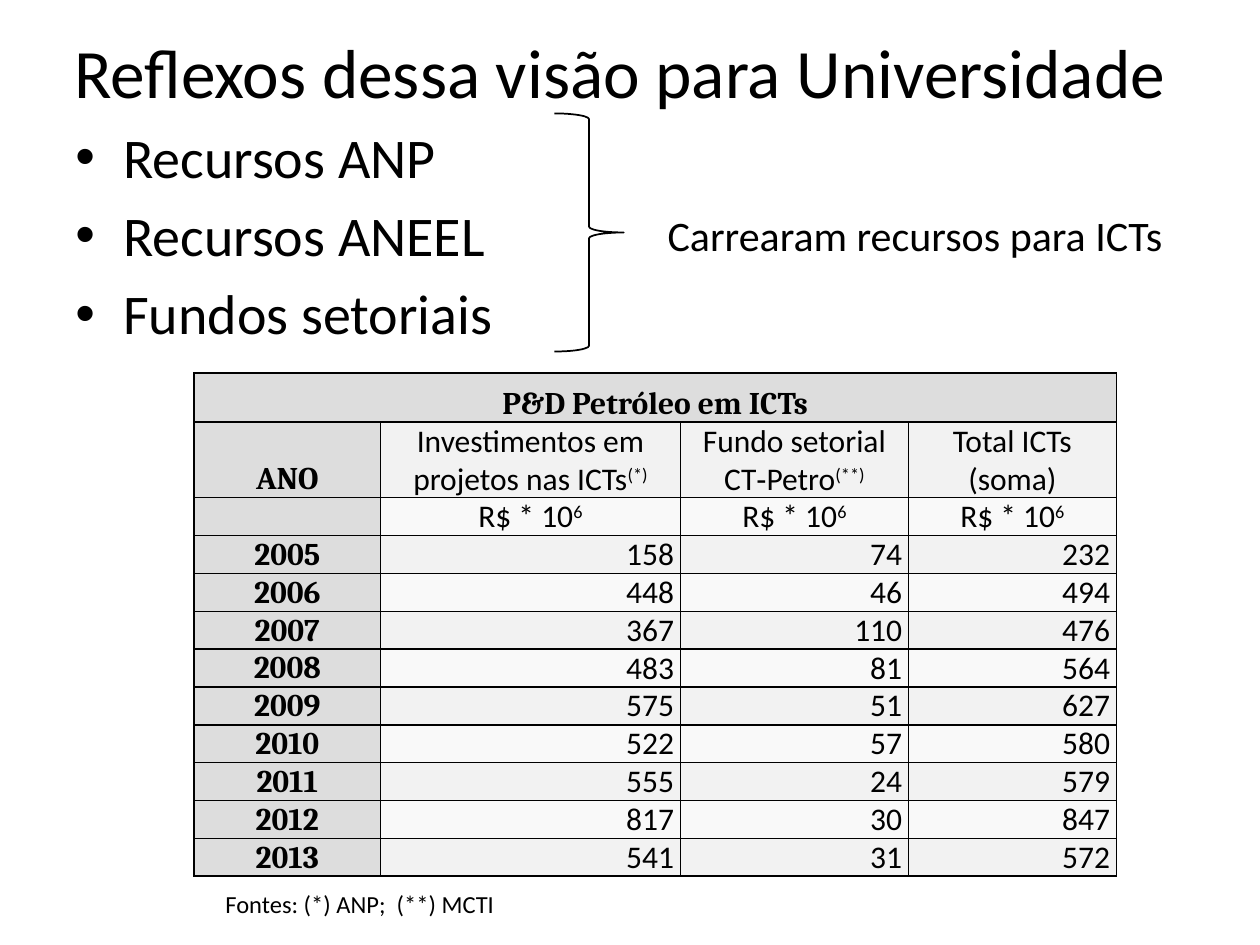
import pptx
import pptx.util
import pptx.dml.color
import pptx.enum.shapes
import pptx.enum.text
import pptx.oxml
import pptx.oxml.ns

Inches, Pt = pptx.util.Inches, pptx.util.Pt
ALIGN = pptx.enum.text.PP_ALIGN
ANCHOR = pptx.enum.text.MSO_ANCHOR

# Content
TITLE = "Reflexos dessa visão para Universidade"
FUNDING = ["Recursos ANP", "Recursos ANEEL", "Fundos setoriais"]
EFFECT = "Carrearam recursos para ICTs"
SOURCES = "Fontes: (*) ANP;  (**) MCTI"
TABLE_TITLE = "P&D Petróleo em ICTs"
# Each header or unit is (text, superscript)
HEADERS = [
    ("ANO", ""),
    ("Investimentos em projetos nas ICTs", "(*)"),
    ("Fundo setorial CT‑Petro", "(**)"),
    ("Total ICTs (soma)", ""),
]
UNITS = [("", "")] + [("R$ * 10", "6")] * 3
INVESTMENTS = [
    (2005, 158, 74, 232),
    (2006, 448, 46, 494),
    (2007, 367, 110, 476),
    (2008, 483, 81, 564),
    (2009, 575, 51, 627),
    (2010, 522, 57, 580),
    (2011, 555, 24, 579),
    (2012, 817, 30, 847),
    (2013, 541, 31, 572),
]

COLORS = {"ink": "000000", "label": "DDDDDD", "odd": "F2F2F2", "even": "F9F9F9"}
COLUMN_WIDTHS = [1.48, 2.38, 1.81, 1.65]
TITLE_ROW, HEADER_ROW, DATA_ROW = 0.39, 0.6, 0.26


def rgb(name):
    return pptx.dml.color.RGBColor.from_string(COLORS[name])


def add_run(paragraph, text, size, font="Calibri", bold=False, superscript=False):
    run = paragraph.add_run()
    run.text = text
    run.font.size = Pt(size)
    run.font.name = font
    run.font.bold = bold
    run.font.color.rgb = rgb("ink")
    if superscript:
        run._r.get_or_add_rPr().set("baseline", "30000")


def add_text(slide, box, lines, size):
    frame = slide.shapes.add_textbox(*map(Inches, box)).text_frame
    frame.word_wrap = True
    for i, line in enumerate(lines):
        paragraph = frame.add_paragraph() if i else frame.paragraphs[0]
        add_run(paragraph, line, size)
    return frame


def add_bullet(paragraph):
    properties = paragraph._p.get_or_add_pPr()
    properties.set("marL", str(Inches(0.38)))
    properties.set("indent", str(-Inches(0.38)))
    for tag, attribute, value in (("buFont", "typeface", "Arial"), ("buChar", "char", "•")):
        pptx.oxml.ns.qn("a:" + tag)
        properties.append(pptx.oxml.parse_xml(
            f'<a:{tag} {pptx.oxml.ns.nsdecls("a")} {attribute}="{value}"/>'))


def add_borders(cell):
    properties = cell._tc.get_or_add_tcPr()
    for side in "LRTB":
        properties.append(pptx.oxml.parse_xml(
            f'<a:ln{side} {pptx.oxml.ns.nsdecls("a")} w="{Pt(1)}"><a:solidFill>'
            f'<a:srgbClr val="{COLORS["ink"]}"/></a:solidFill></a:ln{side}>'))


def fill_cell(cell, text, superscript, fill, align):
    is_label = fill == "label"
    add_borders(cell)
    cell.fill.solid()
    cell.fill.fore_color.rgb = rgb(fill)
    cell.margin_left = cell.margin_right = Inches(0.05)
    cell.margin_top = cell.margin_bottom = 0
    cell.vertical_anchor = ANCHOR.BOTTOM
    paragraph = cell.text_frame.paragraphs[0]
    paragraph.alignment = align
    if text:
        add_run(paragraph, text, 18, "Cambria" if is_label else "Calibri", is_label)
    if superscript:
        add_run(paragraph, superscript, 18, superscript=True)


def add_investment_table(slide):
    rows = [[(TABLE_TITLE, "")] + [("", "")] * 3, HEADERS, UNITS]
    rows += [[(str(value), "") for value in year] for year in INVESTMENTS]
    heights = [TITLE_ROW, HEADER_ROW] + [DATA_ROW] * (len(rows) - 2)
    table = slide.shapes.add_table(
        len(rows), len(COLUMN_WIDTHS), Inches(1.54), Inches(2.96),
        Inches(sum(COLUMN_WIDTHS)), Inches(sum(heights))).table
    for column, width in zip(table.columns, COLUMN_WIDTHS):
        column.width = Inches(width)
    for r, (row, height) in enumerate(zip(rows, heights)):
        table.rows[r].height = Inches(height)
        for c, (text, superscript) in enumerate(row):
            is_label = r == 0 or c == 0
            fill = "label" if is_label else ("odd" if r % 2 else "even")
            align = ALIGN.CENTER if is_label or r < 3 else ALIGN.RIGHT
            fill_cell(table.cell(r, c), text, superscript, fill, align)
    table.cell(0, 0).merge(table.cell(0, len(COLUMN_WIDTHS) - 1))


def main():
    deck = pptx.Presentation()
    deck.slide_width, deck.slide_height = Inches(10), Inches(7.5)
    slide = deck.slides.add_slide(deck.slide_layouts[5])

    # Title
    title = slide.shapes.title
    title.left, title.top, title.width, title.height = map(Inches, (0.42, 0.05, 9, 1.02))
    title.text_frame.vertical_anchor = ANCHOR.MIDDLE
    heading = title.text_frame.paragraphs[0]
    heading.alignment = ALIGN.CENTER
    add_run(heading, TITLE, 39.6)

    # Funding sources
    funding = add_text(slide, (0.5, 0.92, 9, 5.78), FUNDING, 32)
    for paragraph in funding.paragraphs:
        paragraph.space_before = Pt(6.4)
        add_bullet(paragraph)

    # Brace and its effect
    brace = slide.shapes.add_shape(
        pptx.enum.shapes.MSO_SHAPE.RIGHT_BRACE, *map(Inches, (4.4, 0.9, 0.55, 1.89)))
    brace.shadow.inherit = False
    brace.fill.background()
    brace.line.color.rgb = rgb("ink")
    brace.line.width = Pt(1)
    add_text(slide, (5.2, 1.61, 4.17, 0.5), [EFFECT], 24)

    # Table and its sources
    add_investment_table(slide)
    add_text(slide, (1.69, 7.01, 5.12, 0.34), [SOURCES], 14)

    deck.save("out.pptx")


if __name__ == "__main__":
    main()
